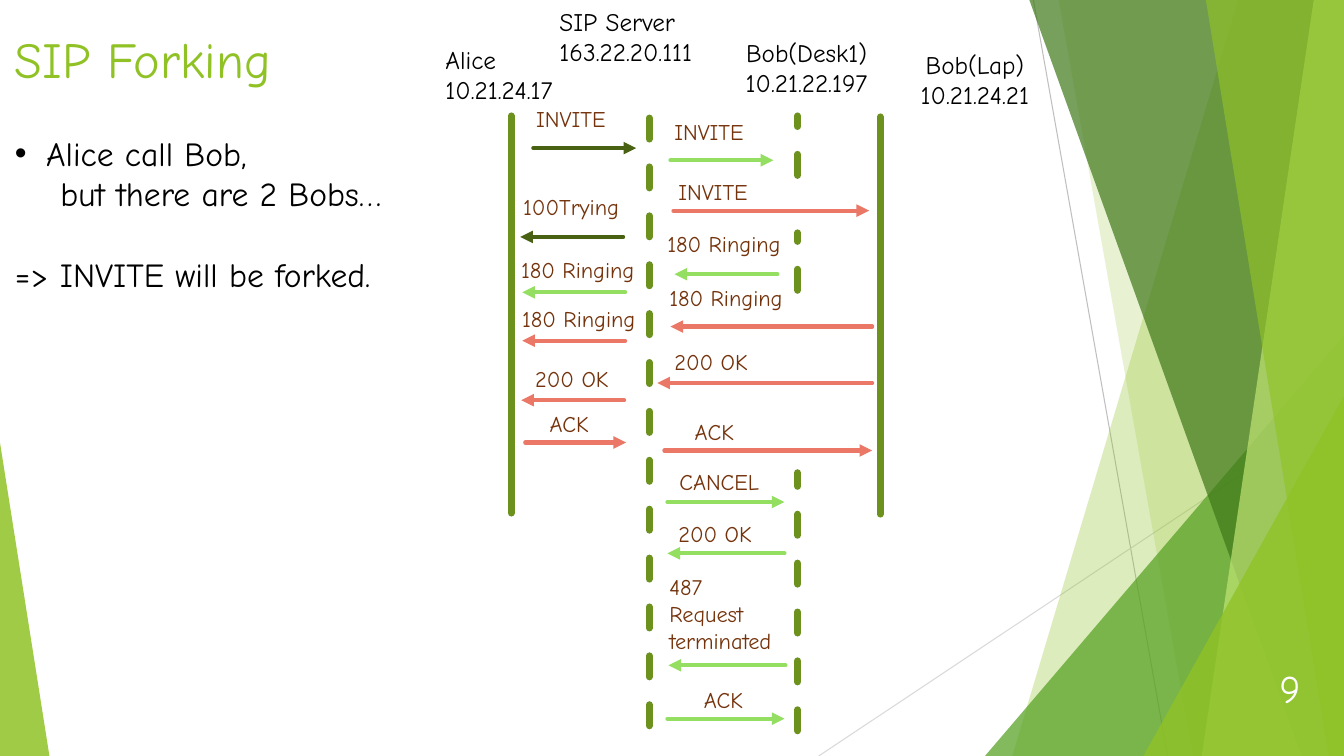
from lxml import etree
from pptx import Presentation
from pptx.dml.color import RGBColor
from pptx.enum.dml import MSO_LINE
from pptx.enum.shapes import MSO_CONNECTOR, MSO_SHAPE
from pptx.enum.text import MSO_ANCHOR, MSO_AUTO_SIZE, PP_ALIGN
from pptx.oxml.ns import qn
from pptx.util import Inches, Pt

STRAIGHT = MSO_CONNECTOR.STRAIGHT
TRIANGLE = MSO_SHAPE.ISOSCELES_TRIANGLE
DASH = MSO_LINE.DASH
TOP, MIDDLE = MSO_ANCHOR.TOP, MSO_ANCHOR.MIDDLE
FIT = MSO_AUTO_SIZE.SHAPE_TO_FIT_TEXT
LEFT, CENTER, RIGHT = PP_ALIGN.LEFT, PP_ALIGN.CENTER, PP_ALIGN.RIGHT

FONT = "Comic Neue"
COLORS = {
    "lime": "90C226", "leaf": "54A021", "forest": "3F7819", "pale": "C0E474",
    "grey": "BFBFBF", "silver": "D9D9D9", "lifeline": "6C921D",
    "alice": "486113", "desk": "94DE61", "laptop": "EB7766",
    "message": "74330C", "black": "000000", "white": "FFFFFF",
}

# Percent of the slide: a band runs from its top x to its foot x,
# a peak has a left x and a top y. Then colour and opacity.
FACETS = [
    ("band", 92.12, 75.32, "lime", 30),
    ("band", 78.77, 88.75, "lime", 20),
    ("peak", 73.29, 44.4, "leaf", 72),
    ("band", 76.59, 96.85, "forest", 70),
    ("band", 97.75, 89.42, "pale", 70),
    ("band", 89.72, 98.87, "lime", 65),
    ("peak", 85.07, 52.4, "lime", 80),
]

# The diagram's grid has 61 columns and 75 rows.
GRID = (61, 75)
# column, bottom row, top row, dash
LIFELINES = [
    (7.7, 50.9, 11.5, None), (21.4, 72, 11, DASH), (44.3, 51, 11.6, None),
    (36.1, 17.4, 11.5, DASH), (36.1, 28.8, 23.1, DASH), (36.1, 72.5, 46.9, DASH),
]
# name, address, column, row, columns wide, alignment
PARTIES = [
    ("Alice", "10.21.24.17", 0.2, 3.9, 17, LEFT),
    ("SIP Server", "163.22.20.111", 11.5, 0.1, 21.8, LEFT),
    ("Bob(Desk1)", "10.21.22.197", 28.5, 3.2, 17, CENTER),
    ("Bob(Lap)", "10.21.24.21", 46.2, 4.4, 15, CENTER),
]
LABEL_COLUMNS = {"INVITE": 11.6, "100Trying": 12.5, "180 Ringing": 15.3,
                 "200 OK": 11.6, "ACK": 10.7, "CANCEL": 10.7}
# label, its column and row, arrow's start and end columns, arrow's row, colour
MESSAGES = [
    ("INVITE", 9.2, 9.9, 9.9, 20.1, 14.7, "alice"),
    ("INVITE", 22.9, 11.2, 23.5, 33.7, 15.9, "desk"),
    ("INVITE", 23.3, 17.2, 23.8, 43.2, 20.9, "laptop"),
    ("100Trying", 7.9, 18.7, 18.8, 8.6, 23.5, "alice"),
    ("180 Ringing", 22.2, 22.3, 34.1, 23.9, 27.2, "desk"),
    ("180 Ringing", 7.7, 24.9, 19, 8.8, 29, "desk"),
    ("180 Ringing", 22.4, 27.7, 43.5, 23.5, 32.4, "laptop"),
    ("180 Ringing", 7.8, 29.8, 19, 8.8, 33.8, "laptop"),
    ("200 OK", 22.9, 34, 43.5, 22.2, 38, "laptop"),
    ("200 OK", 9.1, 35.7, 18.9, 8.7, 39.7, "laptop"),
    ("ACK", 8.1, 40.2, 9.1, 19.1, 43.9, "laptop"),
    ("ACK", 22.5, 41, 22.9, 43.5, 44.7, "laptop"),
    ("CANCEL", 23.4, 46, 23.2, 34.8, 49.8, "desk"),
    ("200 OK", 23.3, 51.1, 34.8, 23.2, 54.9, "desk"),
    ("487\nRequest\nterminated", 22.4, 56.4, 34.9, 23.3, 66, "desk"),
    ("ACK", 23.4, 67.6, 23.2, 34.8, 71.3, "desk"),
]


def rgb(name):
    return RGBColor.from_string(COLORS[name])


def add_line(page, start, end, color, width, dash=None, arrow=False, cap="rnd"):
    line = page.shapes.add_connector(
        STRAIGHT, *(round(length) for length in (*start, *end)))
    line.line.color.rgb = rgb(color)
    line.line.width = Pt(width)
    if dash is not None:
        line.line.dash_style = dash
    outline = line.line._get_or_add_ln()
    outline.set("cap", cap)
    if arrow:
        etree.SubElement(outline, qn("a:tailEnd"), type="triangle")
    etree.SubElement(line._element.spPr, qn("a:effectLst"))


def paint(shape, color, opacity):
    shape.shadow.inherit = False
    shape.line.fill.background()
    shape.fill.solid()
    shape.fill.fore_color.rgb = rgb(color)
    tint = shape._element.spPr.find(".//" + qn("a:srgbClr"))
    etree.SubElement(tint, qn("a:alpha"), val=str(opacity * 1000))


def add_text(page, box, lines, size, color, align=LEFT, anchor=TOP, fit=True):
    """Add one paragraph per line and return the paragraphs."""
    frame = page.shapes.add_textbox(*(round(length) for length in box)).text_frame
    frame.word_wrap = True
    frame.vertical_anchor = anchor
    if fit:
        frame.auto_size = FIT
    for number, line in enumerate(lines):
        para = frame.add_paragraph() if number else frame.paragraphs[0]
        para.alignment = align
        span = para.add_run()
        span.text = line
        span.font.name = FONT
        span.font.size = Pt(size)
        span.font.color.rgb = rgb(color)
    return frame.paragraphs


def add_backdrop(page, box):
    left, top, width, height = box

    def at(x, y):
        return round(left + width * x / 100), round(top + height * y / 100)

    def add_peak(x, y, right, tip):
        start, end = at(x, y), at(right, 100)
        peak = page.shapes.add_shape(
            TRIANGLE, *start, end[0] - start[0], end[1] - start[1])
        peak.adjustments[0] = tip
        return peak

    add_line(page, at(76.89, 0), at(86.87, 100), "grey", 0.75, cap="flat")
    add_line(page, at(100, 53.73), at(60.92, 100), "silver", 0.75, cap="flat")
    for kind, first, second, color, opacity in FACETS:
        if kind == "band":
            outline = page.shapes.build_freeform(*at(first, 0), scale=1.0)
            outline.add_line_segments([at(100, 0), at(100, 100), at(second, 100)])
            facet = outline.convert_to_shape()
        else:
            facet = add_peak(first, second, 100, 1)
        paint(facet, color, opacity)
    paint(add_peak(0, 58.53, 3.68, 0), "lime", 85)


def add_summary(page, box):
    left, top, width, height = box
    add_text(page, (left, top, width, height * 0.35), ["SIP Forking"], 36, "lime",
             fit=False)
    call, bobs, fork = add_text(
        page, (left, top + height * 0.34, width * 0.68, height * 0.66),
        ["Alice call Bob,", "but there are 2 Bobs…", "=> INVITE will be forked."],
        24, "black")
    bullet = call._p.get_or_add_pPr()
    bullet.set("marL", str(Inches(0.31)))
    bullet.set("indent", str(-Inches(0.31)))
    etree.SubElement(bullet, qn("a:buFont"), typeface="Arial")
    etree.SubElement(bullet, qn("a:buChar"), char="•")
    bobs._p.get_or_add_pPr().set("marL", str(Inches(0.45)))
    fork.space_before = Pt(28.8)


def add_sequence(page, box):
    left, top, width, height = box
    column, row = width / GRID[0], height / GRID[1]

    def at(x, y):
        return left + x * column, top + y * row

    for x, bottom, upper, dash in LIFELINES:
        add_line(page, at(x, bottom), at(x, upper), "lifeline", 5, dash)
    for name, address, x, y, columns, align in PARTIES:
        add_text(page, (*at(x, y), columns * column, 7.1 * row),
                 [name, address], 18, "black", align)
    for label, x, y, start, end, level, color in MESSAGES:
        lines = label.split("\n")
        add_line(page, at(start, level), at(end, level), color, 3, arrow=True)
        add_text(page, (*at(x, y), LABEL_COLUMNS.get(label, 14.1) * column,
                        (1 + 2.7 * len(lines)) * row),
                 lines, 16, "message", CENTER if label == "ACK" else LEFT)


def add_page_number(page, box):
    add_text(page, box, ["9"], 28, "white", RIGHT, MIDDLE, fit=False)


def main():
    deck = Presentation()
    deck.slide_width, deck.slide_height = Inches(13.33), Inches(7.5)
    page = deck.slides.add_slide(deck.slide_layouts[6])
    wide, high = deck.slide_width, deck.slide_height
    add_backdrop(page, (0, 0, wide, high))
    add_summary(page, (Inches(0.05), high * 0.03, wide * 0.5, high * 0.41))
    add_sequence(page, (Inches(4.3), 0, Inches(6.1), high))
    add_page_number(page, (wide * 0.875, high * 0.85, wide * 0.1, high * 0.12))
    deck.save("out.pptx")


if __name__ == "__main__":
    main()
